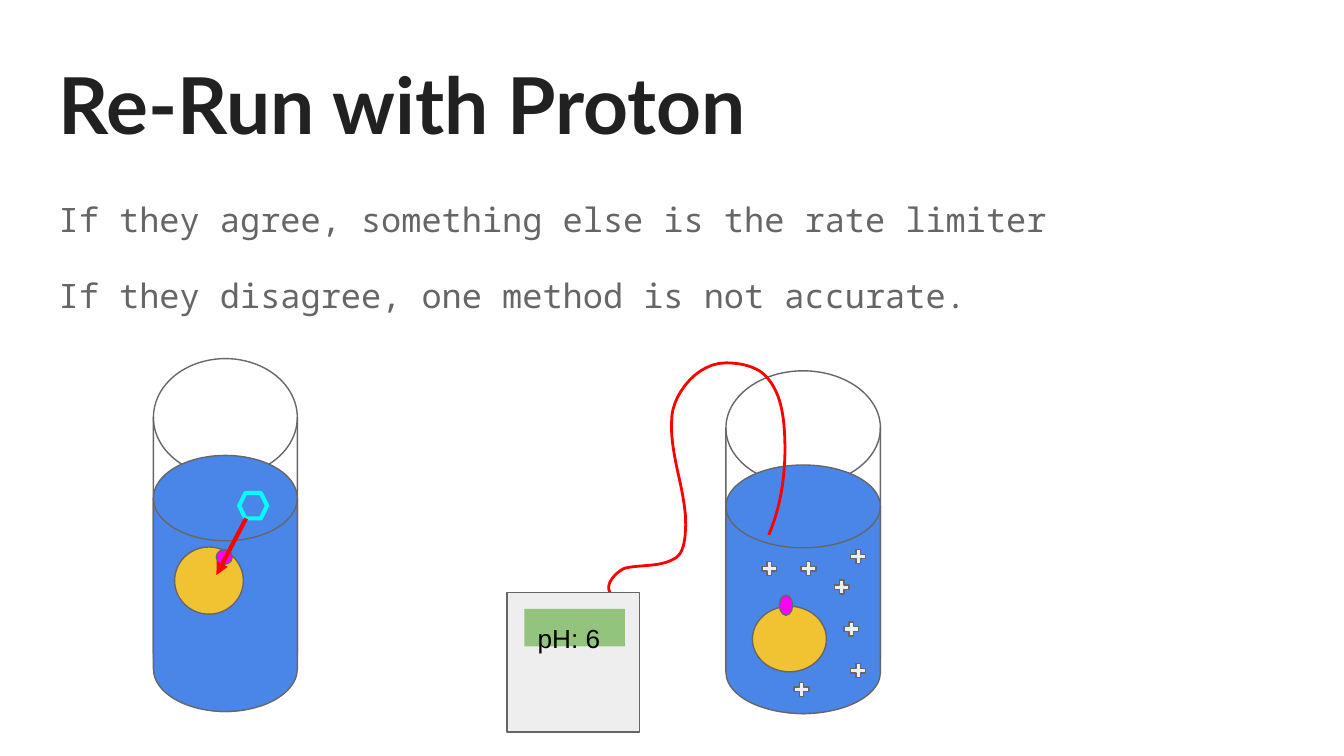
from lxml import etree
from pptx import Presentation
from pptx.dml.color import RGBColor
from pptx.enum.shapes import MSO_CONNECTOR, MSO_SHAPE
from pptx.enum.text import MSO_ANCHOR, PP_ALIGN
from pptx.oxml.ns import qn
from pptx.util import Cm, Pt

DISK = MSO_SHAPE.FLOWCHART_MAGNETIC_DISK
OVAL = MSO_SHAPE.OVAL
HEXAGON = MSO_SHAPE.HEXAGON
PLUS = MSO_SHAPE.MATH_PLUS
RECTANGLE = MSO_SHAPE.RECTANGLE
STRAIGHT = MSO_CONNECTOR.STRAIGHT
TOP = MSO_ANCHOR.TOP
LEFT = PP_ALIGN.LEFT

COLORS = {
    "title": "212121",
    "body": "666666",
    "outline": "666666",
    "liquid": "4A86E8",
    "cell": "F1C232",
    "protein": "FF00FF",
    "ligand": "00FFFF",
    "red": "FF0000",
    "device": "EEEEEE",
    "display": "93C47D",
    "black": "000000",
}

TITLE = {"name": "Lato", "size": Pt(42), "bold": True}
BODY = {"name": "Noto Sans Mono", "size": Pt(18)}
READING = {"name": "Arial", "size": Pt(14)}
BODY_SPACING = {"line_spacing": 1.15, "space_after": Pt(16)}

BODY_LINES = [
    "If they agree, something else is the rate limiter",
    "If they disagree, one method is not accurate.",
]
PROTONS = [(15.72, 10.92), (15.9, 11.71), (16.03, 10.34), (14.96, 12.85),
           (15.09, 10.57), (16.03, 12.5), (14.35, 10.57)]

WIRE_START = (14.53, 10.11)
# Each row holds two control points and the end point of a Bezier curve.
WIRE_CURVES = [
    ((14.78, 9.53), (14.86, 8.86), (14.83, 8.23)),
    ((14.81, 7.85), (14.76, 7.44), (14.5, 7.14)),
    ((14.33, 6.93), (14, 6.86), (13.72, 6.86)),
    ((13.18, 6.86), (12.75, 7.42), (12.7, 7.85)),
    ((12.62, 8.61), (13.03, 9.37), (12.95, 10.11)),
    ((12.93, 10.29), (12.9, 10.49), (12.73, 10.57)),
    ((12.47, 10.72), (12.12, 10.67), (11.81, 10.74)),
    ((11.63, 10.82), (11.43, 11.05), (11.53, 11.2)),
]
CURVE_STEPS = 12


def rgb(color):
    return RGBColor.from_string(COLORS[color])


def apply_format(target, values):
    for name, value in values.items():
        setattr(target, name, value)


def write_text(shape, lines, font, color, spacing=None):
    frame = shape.text_frame
    apply_format(frame, {"word_wrap": True, "vertical_anchor": TOP})
    for side in ("left", "top", "right", "bottom"):
        setattr(frame, f"margin_{side}", Cm(0.25))
    for index, line in enumerate(lines):
        para = frame.add_paragraph() if index else frame.paragraphs[0]
        apply_format(para, {"alignment": LEFT, **(spacing or {})})
        span = para.add_run()
        span.text = line
        apply_format(span.font, font)
        span.font.color.rgb = rgb(color)


def add_text(page, place, lines, font, color, spacing=None):
    box = page.shapes.add_textbox(*map(Cm, place))
    write_text(box, lines, font, color, spacing)


def style_shape(shape, fill, line, width):
    shape.shadow.inherit = False
    if fill:
        shape.fill.solid()
        shape.fill.fore_color.rgb = rgb(fill)
    else:
        shape.fill.background()
    if line:
        shape.line.color.rgb = rgb(line)
        shape.line.width = Pt(width)
    else:
        shape.line.fill.background()


def add_figure(page, kind, place, fill=None, line="outline", width=0.75):
    shape = page.shapes.add_shape(kind, *map(Cm, place))
    style_shape(shape, fill, line, width)
    return shape


def add_tube(page, left, width, top, liquid_top, bottom):
    add_figure(page, DISK, (left, top, width, bottom - top))
    add_figure(page, DISK, (left, liquid_top, width, bottom - liquid_top), "liquid")


def add_arrow(page, start, end):
    arrow = page.shapes.add_connector(STRAIGHT, *map(Cm, start + end))
    arrow.line.color.rgb = rgb("red")
    arrow.line.width = Pt(2.25)
    line = arrow.line._get_or_add_ln()
    etree.SubElement(line, qn("a:tailEnd"), type="triangle")
    etree.SubElement(arrow._element.spPr, qn("a:effectLst"))


def curve_points(start, curves):
    """Return points along a chain of cubic Bezier curves, after its start."""
    points = []
    for first, second, end in curves:
        for step in range(1, CURVE_STEPS + 1):
            t = step / CURVE_STEPS
            u = 1 - t
            points.append(tuple(
                u**3 * a + 3 * u**2 * t * b + 3 * u * t**2 * c + t**3 * d
                for a, b, c, d in zip(start, first, second, end)))
        start = end
    return points


def add_wire(page):
    builder = page.shapes.build_freeform(*map(Cm, WIRE_START))
    points = curve_points(WIRE_START, WIRE_CURVES)
    builder.add_line_segments([(Cm(x), Cm(y)) for x, y in points], close=False)
    style_shape(builder.convert_to_shape(), None, "red", 1.5)


def add_meter(page):
    add_figure(page, RECTANGLE, (9.58, 11.2, 2.51, 2.64), "device")
    display = add_figure(page, RECTANGLE, (9.91, 11.51, 1.9, 0.71), "display", None)
    write_text(display, ["pH: 6"], READING, "black")


def add_binding_tube(page):
    add_tube(page, 2.9, 2.72, 6.78, 8.61, 13.45)
    add_figure(page, HEXAGON, (4.52, 9.32, 0.53, 0.48), None, "ligand", 2.25)
    add_figure(page, OVAL, (3.3, 10.34, 1.3, 1.27), "cell")
    add_figure(page, OVAL, (4.09, 10.39, 0.3, 0.28), "protein")
    add_arrow(page, (4.65, 9.8), (4.09, 10.87))


def add_proton_tube(page):
    add_tube(page, 13.72, 2.92, 7.01, 8.79, 13.49)
    add_figure(page, OVAL, (14.22, 11.46, 1.4, 1.24), "cell")
    add_wire(page)
    add_meter(page)
    add_figure(page, OVAL, (14.73, 11.25, 0.25, 0.38), "protein")
    for left, top in PROTONS:
        add_figure(page, PLUS, (left, top, 0.38, 0.36), "device")


def main():
    deck = Presentation()
    deck.slide_width, deck.slide_height = Cm(25.4), Cm(14.29)
    page = deck.slides.add_slide(deck.slide_layouts[6])
    add_text(page, (0.86, 0.81, 23.67, 2.24), ["Re-Run with Proton"], TITLE, "title")
    add_text(page, (0.86, 3.4, 23.67, 9.27), BODY_LINES, BODY, "body", BODY_SPACING)
    add_binding_tube(page)
    add_proton_tube(page)
    deck.save("out.pptx")


if __name__ == "__main__":
    main()
